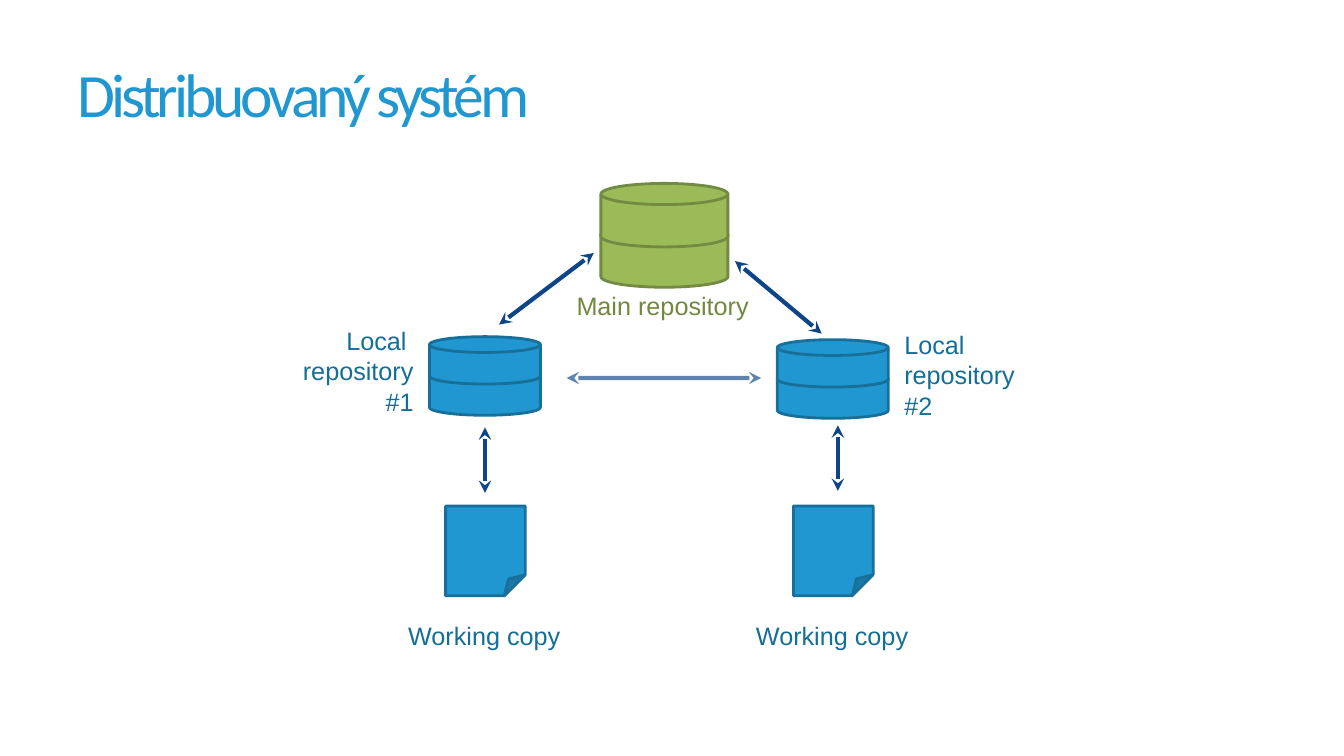
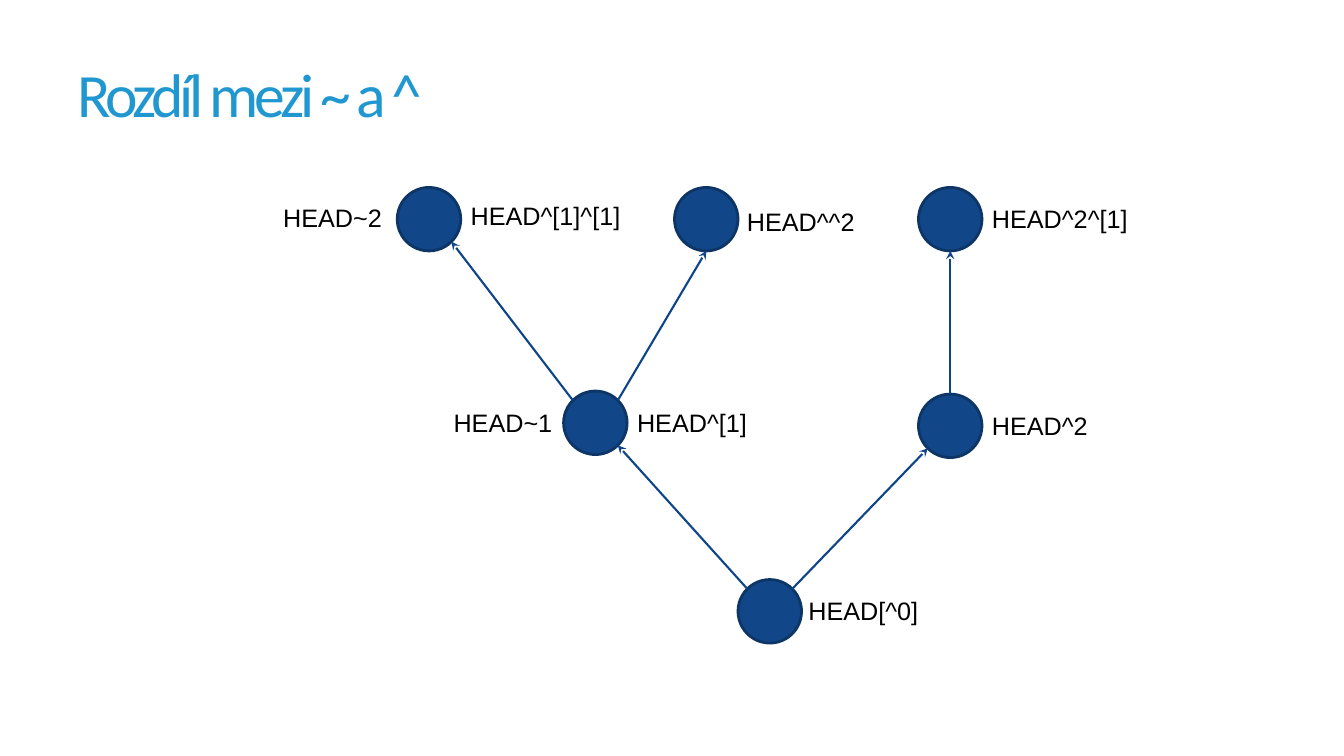
from math import cos, pi, sin

from lxml import etree
from pptx import Presentation
from pptx.dml.color import RGBColor
from pptx.enum.shapes import MSO_CONNECTOR, MSO_SHAPE
from pptx.enum.text import MSO_ANCHOR, MSO_AUTO_SIZE, PP_ALIGN
from pptx.oxml.ns import qn
from pptx.util import Inches, Pt

DISK = MSO_SHAPE.FLOWCHART_MAGNETIC_DISK
SHEET = MSO_SHAPE.FOLDED_CORNER
CIRCLE = MSO_SHAPE.OVAL
STRAIGHT = MSO_CONNECTOR.STRAIGHT
LEFT, RIGHT = PP_ALIGN.LEFT, PP_ALIGN.RIGHT
MIDDLE = MSO_ANCHOR.MIDDLE
FIT_SHAPE = MSO_AUTO_SIZE.SHAPE_TO_FIT_TEXT

BLUE, BLUE_EDGE, BLUE_TEXT = "2097D0", "18709A", "146E98"
GREEN, GREEN_EDGE, GREEN_TEXT = "9BBB59", "738A42", "71893F"
NAVY, NAVY_EDGE, ARROW, BLACK = "114788", "0D3565", "0E4588", "000000"

NODE_SIZE = 0.63
LABEL_HEIGHT = 0.4
COMMITS = {
    "head": (7.32, 5.75),
    "first parent": (5.59, 3.88),
    "second parent": (9.11, 3.91),
    "first grandparent": (3.94, 1.86),
    "merged grandparent": (6.69, 1.86),
    "second grandparent": (9.11, 1.86),
}
PARENT_LINKS = [
    ("first grandparent", 45, "first parent", 225),
    ("merged grandparent", 90, "first parent", 315),
    ("second grandparent", 90, "second parent", 270),
    ("first parent", 45, "head", 225),
    ("second parent", 135, "head", 315),
]
COMMIT_LABELS = [
    ("HEAD[^0]", 7.92, 5.86, 1.3),
    ("HEAD~1", 4.4, 3.99, 1.19),
    ("HEAD~2", 2.71, 1.96, 1.19),
    ("HEAD^2", 9.74, 4.02, 1.16),
    ("HEAD^[1]", 6.22, 3.99, 1.3),
    ("HEAD^2^[1]", 9.74, 1.97, 1.56),
    ("HEAD^^2", 7.31, 2.0, 1.28),
    ("HEAD^[1]^[1]", 4.57, 1.94, 1.7),
]


def color(hex_value):
    """Turn a hex string into a colour."""
    return RGBColor.from_string(hex_value)


def add_text(slide, text, box, hex_value, size=18, font="Arial", align=LEFT):
    """Add a one-paragraph text box and return its shape."""
    shape = slide.shapes.add_textbox(*map(Inches, box))
    shape.text_frame.word_wrap = False
    paragraph = shape.text_frame.paragraphs[0]
    paragraph.text = text
    paragraph.alignment = align
    paragraph.font.size = Pt(size)
    paragraph.font.name = font
    paragraph.font.color.rgb = color(hex_value)
    return shape


def add_label(slide, text, box, hex_value, align=LEFT):
    """Add a diagram label whose box fits its text."""
    shape = add_text(slide, text, box, hex_value, align=align)
    shape.text_frame.auto_size = FIT_SHAPE


def add_titled_slide(presentation, title):
    """Add a blank slide with the shared title style."""
    slide = presentation.slides.add_slide(presentation.slide_layouts[6])
    shape = add_text(slide, title, (0.67, 0.3, 12, 1.25), BLUE, 44, "Calibri")
    shape.text_frame.word_wrap = True
    shape.text_frame.vertical_anchor = MIDDLE
    properties = shape.text_frame.paragraphs[0]._p.pPr.find(qn("a:defRPr"))
    properties.set("spc", "-300")
    return slide


def add_figure(slide, kind, box, fill, edge):
    """Add a filled and outlined preset shape."""
    shape = slide.shapes.add_shape(kind, *map(Inches, box))
    shape.shadow.inherit = False
    shape.fill.solid()
    shape.fill.fore_color.rgb = color(fill)
    shape.line.color.rgb = color(edge)
    shape.line.width = Pt(2)
    return shape


def add_arrow(slide, start, end, width=3, both_ends=True, alpha=None):
    """Add a straight arrow with its head at the start or at both ends."""
    connector = slide.shapes.add_connector(STRAIGHT, *map(Inches, (*start, *end)))
    connector.line.color.rgb = color(ARROW)
    connector.line.width = Pt(width)
    properties = connector._element.spPr
    outline = properties.find(qn("a:ln"))
    if alpha:
        shade = outline.find(".//" + qn("a:srgbClr"))
        etree.SubElement(shade, qn("a:alpha"), val=str(alpha * 1000))
    for tag in ("a:headEnd", "a:tailEnd")[: 2 if both_ends else 1]:
        etree.SubElement(outline, qn(tag), type="stealth")
    etree.SubElement(properties, qn("a:effectLst"))


def add_database(slide, box, step, fill, edge):
    """Stack two disks, the upper one a step above the lower."""
    left, top, width, height = box
    for disk_top in (top + step, top):
        add_figure(slide, DISK, (left, disk_top, width, height), fill, edge)


def add_local_column(slide, left, top, arrow_start):
    """Draw a local repository above its working copy."""
    add_database(slide, (left, top, 1.1, 0.47), 0.31, BLUE, BLUE_EDGE)
    arrow_left, arrow_top = arrow_start
    add_arrow(slide, (arrow_left, arrow_top + 0.65), arrow_start)
    sheet = add_figure(slide, SHEET, (left + 0.16, 5.02, 0.79, 0.89), BLUE, BLUE_EDGE)
    adjustments = sheet._element.spPr.find(".//" + qn("a:avLst"))
    etree.SubElement(adjustments, qn("a:gd"), name="adj", fmla="val 26300")
    add_label(slide, "Working copy", (left - 0.31, 6.1, 1.73, LABEL_HEIGHT), BLUE_TEXT)


def build_distributed_slide(presentation):
    """Show the main repository shared by two local ones."""
    slide = add_titled_slide(presentation, "Distribuovaný systém")
    add_database(slide, (5.96, 1.82, 1.26, 0.63), 0.4, GREEN, GREEN_EDGE)
    add_label(slide, "Main repository", (5.62, 2.83, 1.93, LABEL_HEIGHT), GREEN_TEXT)
    add_local_column(slide, 4.26, 3.34, (4.81, 4.24))
    add_local_column(slide, 7.71, 3.37, (8.31, 4.22))
    add_label(slide, "Local \vrepository\v#1", (2.89, 3.18, 1.31, 1.01), BLUE_TEXT, RIGHT)
    add_label(slide, "Local \vrepository \v#2", (8.87, 3.22, 1.38, 1.01), BLUE_TEXT)
    add_arrow(slide, (5.89, 2.51), (4.95, 3.22))
    add_arrow(slide, (8.15, 3.31), (7.29, 2.59))
    add_arrow(slide, (5.62, 3.75), (7.55, 3.75), alpha=66)


def rim_point(commit, degrees):
    """Find a point on a commit circle, clockwise from its right side."""
    radius = NODE_SIZE / 2
    angle = degrees * pi / 180
    left, top = COMMITS[commit]
    return left + radius * (1 + cos(angle)), top + radius * (1 + sin(angle))


def build_ancestry_slide(presentation):
    """Show a commit graph with its ancestor references."""
    slide = add_titled_slide(presentation, "Rozdíl mezi ~ a ^")
    for left, top in COMMITS.values():
        add_figure(slide, CIRCLE, (left, top, NODE_SIZE, NODE_SIZE), NAVY, NAVY_EDGE)
    for parent, parent_angle, child, child_angle in PARENT_LINKS:
        start, end = rim_point(parent, parent_angle), rim_point(child, child_angle)
        add_arrow(slide, start, end, 1.5, both_ends=False)
    for text, left, top, width in COMMIT_LABELS:
        add_label(slide, text, (left, top, width, LABEL_HEIGHT), BLACK)


def main():
    """Build and save the presentation."""
    presentation = Presentation()
    presentation.slide_width = Inches(13.33)
    presentation.slide_height = Inches(7.5)
    build_distributed_slide(presentation)
    build_ancestry_slide(presentation)
    presentation.save("out.pptx")


if __name__ == "__main__":
    main()
